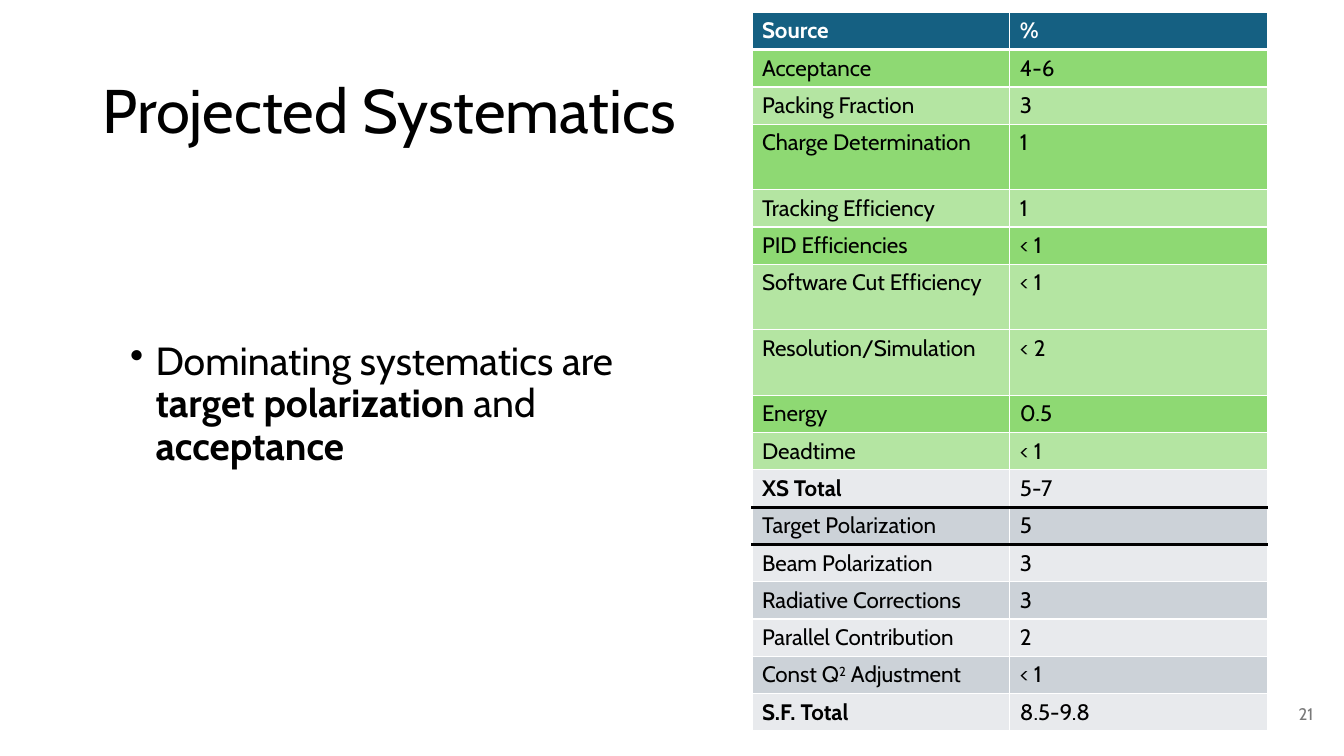
"""Build the Projected Systematics slide with its table of uncertainties."""
from lxml.etree import SubElement
from pptx import Presentation
from pptx.dml.color import RGBColor
from pptx.enum.text import MSO_ANCHOR as Anchor, PP_ALIGN as Align
from pptx.oxml.ns import qn
from pptx.util import Cm, Pt

BLACK, WHITE = "000000", "FFFFFF"
BLUE, GREEN, PALE_GREEN = "156082", "8ED973", "B4E5A2"
GREY, PALE_GREY = "CCD2D8", "E8EAED"
ROW, TALL_ROW = 0.94, 1.65

ROWS = [
    ("Source", "%", BLUE, ROW),
    ("Acceptance", "4-6", GREEN, ROW),
    ("Packing Fraction", "3", PALE_GREEN, ROW),
    ("Charge Determination", "1", GREEN, TALL_ROW),
    ("Tracking Efficiency", "1", PALE_GREEN, ROW),
    ("PID Efficiencies", "< 1", GREEN, ROW),
    ("Software Cut Efficiency", "< 1", PALE_GREEN, TALL_ROW),
    ("Resolution/Simulation", "< 2", PALE_GREEN, TALL_ROW),
    ("Energy", "0.5", GREEN, ROW),
    ("Deadtime", "< 1", PALE_GREEN, ROW),
    ("XS Total", "5-7", PALE_GREY, ROW),
    ("Target Polarization", "5", GREY, ROW),
    ("Beam Polarization", "3", PALE_GREY, ROW),
    ("Radiative Corrections", "3", GREY, ROW),
    ("Parallel Contribution", "2", PALE_GREY, ROW),
    ("Const Q^2^ Adjustment", "< 1", GREY, ROW),
    ("S.F. Total", "8.5-9.8", PALE_GREY, ROW),
]
RULES = {"Source": (WHITE, 3), "XS Total": (BLACK, 2.25), "Target Polarization": (BLACK, 2.25)}


def rgb(color):
    return RGBColor.from_string(color)


class Deck:
    """Holds the font and the current slide, and draws each kind of element."""

    def __init__(self, font):
        self.font = font
        self.prs = Presentation()
        self.prs.slide_width, self.prs.slide_height = Cm(33.87), Cm(19.05)
        self.s = self.prs.slides.add_slide(self.prs.slide_layouts[6])

    def style(self, p, size, color=BLACK, bold=False):
        f = p.font
        f.name, f.size, f.bold = self.font, Pt(size), bold
        f.color.rgb = rgb(color)

    def text(self, x, y, w, h, runs, size, color=BLACK, anchor=Anchor.MIDDLE, align=Align.LEFT):
        tf = self.s.shapes.add_textbox(Cm(x), Cm(y), Cm(w), Cm(h)).text_frame
        tf.word_wrap, tf.vertical_anchor = True, anchor
        p = tf.paragraphs[0]
        p.alignment, p.line_spacing = align, 0.9
        self.style(p, size, color)
        for words, bold in runs:
            r = p.add_run()
            r.text = words
            if bold:
                r.font.bold = True
        return p

    def bullet(self, *args, **kwargs):
        p = self.text(*args, anchor=Anchor.TOP, **kwargs)
        p.space_before = Pt(10)
        pPr = p._p.get_or_add_pPr()
        pPr.set("marL", str(Cm(0.64)))
        pPr.set("indent", str(-Cm(0.64)))
        bullet = pPr.makeelement(qn("a:buChar"), {"char": "•"})
        pPr.find(qn("a:defRPr")).addprevious(bullet)

    def border(self, cell, side, color, width):
        ln = SubElement(cell._tc.get_or_add_tcPr(), qn(f"a:ln{side}"), w=str(Pt(width)))
        SubElement(SubElement(ln, qn("a:solidFill")), qn("a:srgbClr"), val=color)

    def cell(self, cell, words, fill, top, bottom, color, bold):
        thin = (WHITE, 1)
        for side, line in zip("LRTB", (thin, thin, top, bottom)):
            self.border(cell, side, *line)
        cell.fill.solid()
        cell.fill.fore_color.rgb = rgb(fill)
        p = cell.text_frame.paragraphs[0]
        self.style(p, 16, color, bold)
        for i, part in enumerate(words.split("^")):
            r = p.add_run()
            r.text = part
            if i % 2:
                r._r.get_or_add_rPr().set("baseline", "30000")

    def table(self, x, y, col_width, rows, rules):
        height = sum(row[-1] for row in rows)
        table = self.s.shapes.add_table(
            len(rows), 2, Cm(x), Cm(y), Cm(2 * col_width), Cm(height)).table
        for column in table.columns:
            column.width = Cm(col_width)
        top = (WHITE, 1)
        for i, (source, percent, fill, row_height) in enumerate(rows):
            table.rows[i].height = Cm(row_height)
            bottom = rules.get(source, (WHITE, 1))
            color = BLACK if i else WHITE
            for j, words in enumerate((source, percent)):
                bold = i == 0 or words.endswith("Total")
                self.cell(table.cell(i, j), words, fill, top, bottom, color, bold)
            top = bottom


def main():
    deck = Deck("Cabin")
    deck.text(2.33, 1.01, 29.21, 3.68, [("Projected Systematics", False)], 44)
    deck.bullet(3.03, 8.48, 12.98, 4, [
        ("Dominating systematics are ", False), ("target polarization ", True),
        ("and ", False), ("acceptance", True)], 28)
    deck.table(18.95, 0.31, 6.5, ROWS, RULES)
    deck.text(25.73, 17.52, 7.62, 1.02, [("21", False)], 12, "797979", align=Align.RIGHT)
    deck.prs.save("out.pptx")


if __name__ == "__main__":
    main()
